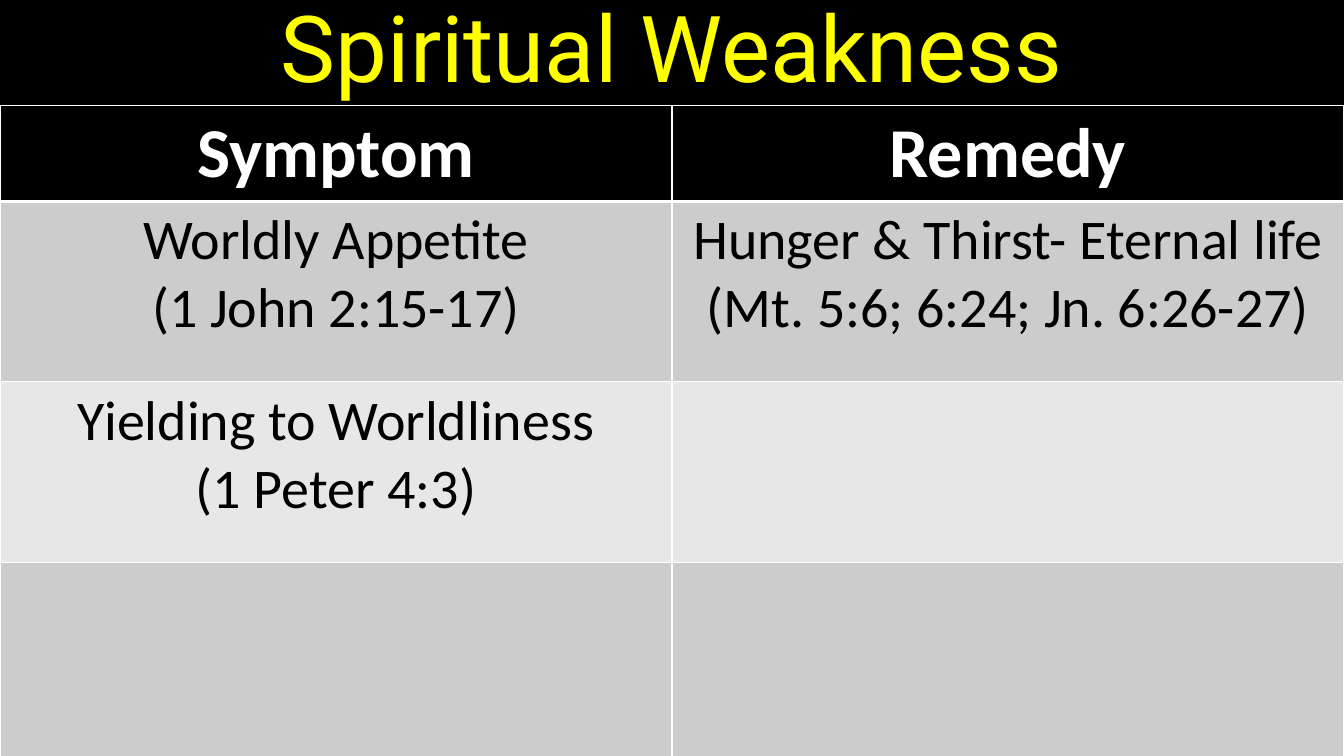
from lxml.etree import SubElement
from pptx import Presentation
from pptx.dml.color import RGBColor
from pptx.enum.text import MSO_ANCHOR, MSO_AUTO_SIZE, PP_ALIGN
from pptx.oxml.ns import qn
from pptx.util import Inches, Pt

COLORS = {
    "black": "000000",
    "white": "FFFFFF",
    "title": "FFFF00",
    "band_dark": "CCCCCC",
    "band_light": "E7E7E7",
}
WIDTH, HEIGHT = 13.33, 7.5
TITLE_HEIGHT = 1.05
ROW_HEIGHTS = [0.9, 1.79, 1.79, 2.13]

# Each cell is a list of paragraphs
ROWS = [
    [["Symptom"], ["Remedy"]],
    [["Worldly Appetite", "(1 John 2:15-17)"],
     ["Hunger & Thirst- Eternal life", "(Mt. 5:6; 6:24; Jn. 6:26-27)"]],
    [["Yielding to Worldliness", "(1 Peter 4:3)"], []],
    [[], []],
]


def rgb(name):
    return RGBColor.from_string(COLORS[name])


def write(p, text, size, color, font="Calibri", bold=False):
    p.alignment = PP_ALIGN.CENTER
    r = p.add_run()
    r.text = text
    r.font.name = font
    r.font.size = Pt(size)
    r.font.bold = bold
    r.font.color.rgb = rgb(color)


def set_borders(cell, color, **widths):
    tcPr = cell._tc.get_or_add_tcPr()
    for side, width in widths.items():
        ln = SubElement(tcPr, qn(f"a:ln{side}"), w=str(Pt(width)))
        fill = SubElement(ln, qn("a:solidFill"))
        SubElement(fill, qn("a:srgbClr"), val=COLORS[color])


def add_title(s, text):
    title = s.shapes.title
    title.left, title.top = Inches(0), Inches(0)
    title.width, title.height = Inches(WIDTH), Inches(TITLE_HEIGHT)
    tf = title.text_frame
    tf.auto_size = MSO_AUTO_SIZE.NONE
    tf.vertical_anchor = MSO_ANCHOR.MIDDLE
    p = tf.paragraphs[0]
    p.line_spacing = 0.9
    write(p, text, size=66, color="title", font="Roboto")


def fill_cell(cell, lines, row):
    header = row == 0
    # Borders come before the fill in the cell properties
    set_borders(cell, "white", L=1, R=1, T=3 if row == 1 else 1,
                B=3 if header else 1)
    cell.fill.solid()
    band = "band_dark" if row % 2 else "band_light"
    cell.fill.fore_color.rgb = rgb("black" if header else band)
    tf = cell.text_frame
    for i, line in enumerate(lines):
        p = tf.add_paragraph() if i else tf.paragraphs[0]
        write(p, line, size=50 if header else 40,
              color="white" if header else "black", bold=header)


def add_grid(s, rows, heights):
    cols = len(rows[0])
    table = s.shapes.add_table(
        len(rows), cols, Inches(0), Inches(TITLE_HEIGHT),
        Inches(WIDTH), Inches(sum(heights))).table
    for col in table.columns:
        col.width = Inches(WIDTH / cols)
    for i, (cells, height) in enumerate(zip(rows, heights)):
        table.rows[i].height = Inches(height)
        for j, lines in enumerate(cells):
            fill_cell(table.cell(i, j), lines, i)


def main():
    prs = Presentation()
    prs.slide_width, prs.slide_height = Inches(WIDTH), Inches(HEIGHT)
    s = prs.slides.add_slide(prs.slide_layouts[5])
    s.background.fill.solid()
    s.background.fill.fore_color.rgb = rgb("black")

    # Title
    add_title(s, "Spiritual Weakness")
    # Symptoms and remedies
    add_grid(s, ROWS, ROW_HEIGHTS)

    prs.save("out.pptx")


if __name__ == "__main__":
    main()
